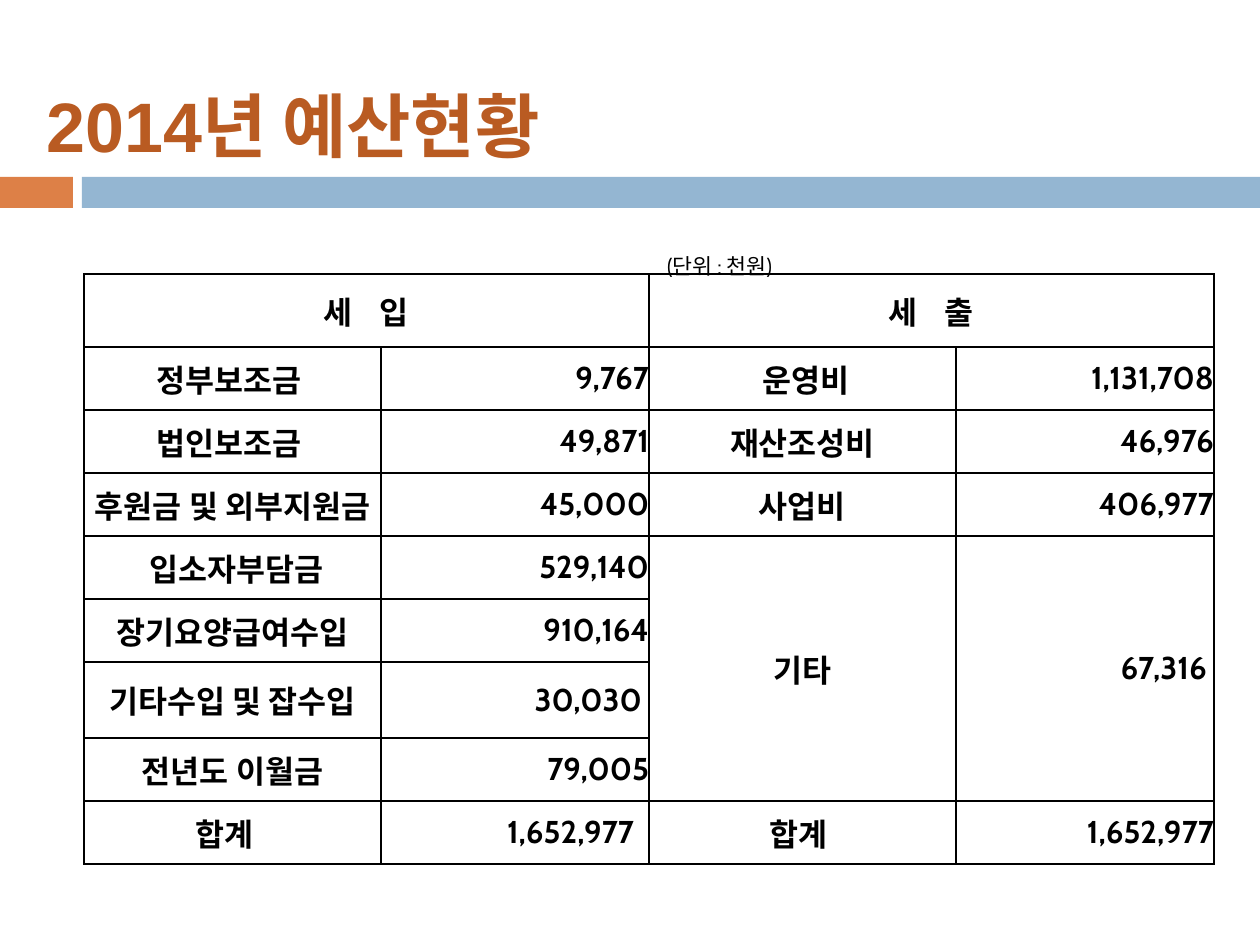
"""Build the 2014 budget slide: title, divider bars, unit note and budget table."""
from dataclasses import dataclass

from lxml.etree import SubElement
from pptx import Presentation
from pptx.dml.color import RGBColor
from pptx.enum.shapes import MSO_SHAPE
from pptx.enum.text import MSO_ANCHOR, MSO_AUTO_SIZE, PP_ALIGN
from pptx.oxml.ns import qn
from pptx.util import Emu, Pt


@dataclass(frozen=True)
class Theme:
    """Colours, fonts and type sizes."""
    ink: str = "000000"
    title: str = "B95B22"
    orange: str = "DD8047"
    blue: str = "94B6D2"
    title_font: str = "Arial"
    body_font: str = "Cabin"
    title_pt: float = 40
    table_pt: float = 18
    note_pt: float = 12.4
    border_pt: float = 1


@dataclass(frozen=True)
class Box:
    """A rectangle in px."""
    x: int
    y: int
    w: int
    h: int


@dataclass(frozen=True)
class Bar:
    """A coloured divider bar."""
    box: Box
    color: str


@dataclass(frozen=True)
class Entry:
    """A table cell with its place, span, right padding and tracking."""
    row: int
    col: int
    text: str
    rows: int = 1
    cols: int = 1
    pad: int = 0
    tracking: int = 0


THEME = Theme()
SCALE = 914400 / 126
TITLE = Box(34, 76, 804, 97)
NOTE = Box(667, 249, 300, 34)
TABLE = Box(84, 274, 1132, 590)
COLS = (297, 268, 307, 258)
ROWS = (73, 63, 63, 63, 63, 63, 76, 63, 63)
BARS = (
    Bar(Box(0, 177, 73, 31), THEME.orange),
    Bar(Box(82, 177, 1178, 31), THEME.blue),
)
INCOME = (
    ("정부보조금 ", "9,767"),
    ("법인보조금 ", "49,871"),
    ("후원금 및 외부지원금", "45,000"),
    (" 입소자부담금", "529,140"),
    ("장기요양급여수입", "910,164"),
    (" 기타수입 및 잡수입 ", "30,030 "),
    ("전년도 이월금", "79,005"),
)
SPENDING = (
    (" 운영비", "1,131,708"),
    ("재산조성비", "46,976"),
    ("사업비", "406,977"),
)
ENTRIES = (
    Entry(0, 0, "세 입", cols=2, tracking=570),
    Entry(0, 2, "세 출", cols=2, tracking=570),
    *(Entry(i, j, t) for i, row in enumerate(INCOME, 1) for j, t in enumerate(row)),
    *(Entry(i, j, t) for i, row in enumerate(SPENDING, 1) for j, t in enumerate(row, 2)),
    Entry(4, 2, "기타", rows=4),
    Entry(4, 3, "67,316 ", rows=4),
    Entry(8, 0, "합계", pad=17),
    Entry(8, 1, "1,652,977", pad=15),
    Entry(8, 2, "합계 "),
    Entry(8, 3, "1,652,977"),
)


def px(n: int) -> Emu:
    """Turn px into EMU."""
    return Emu(round(n * SCALE))


def place(box: Box) -> dict:
    """Return the position attributes of a box."""
    return dict(left=px(box.x), top=px(box.y), width=px(box.w), height=px(box.h))


def apply(target, values: dict) -> None:
    """Set each value as an attribute of the target."""
    for name, value in values.items():
        setattr(target, name, value)


def add_run(p, text: str, font: str, size: float, color: str, bold: bool = False):
    """Add a formatted run to a paragraph."""
    r = p.add_run()
    r.text = text
    apply(r.font, dict(name=font, size=Pt(size), bold=bold))
    r.font.color.rgb = RGBColor.from_string(color)
    return r


def draw_title(s) -> None:
    """Fill the title placeholder."""
    sp = s.shapes.title
    apply(sp, place(TITLE))
    apply(sp.text_frame, dict(vertical_anchor=MSO_ANCHOR.MIDDLE, word_wrap=True,
                              auto_size=MSO_AUTO_SIZE.NONE))
    p = sp.text_frame.paragraphs[0]
    p.alignment = PP_ALIGN.JUSTIFY
    add_run(p, "2014년 예산현황", THEME.title_font, THEME.title_pt, THEME.title, True)


def draw_note(s) -> None:
    """Fill the body placeholder with the unit note."""
    sp = s.placeholders[1]
    apply(sp, place(NOTE))
    apply(sp.text_frame, dict(margin_left=0, margin_right=0, margin_top=0, margin_bottom=0,
                              vertical_anchor=MSO_ANCHOR.MIDDLE, word_wrap=True,
                              auto_size=MSO_AUTO_SIZE.NONE))
    p = sp.text_frame.paragraphs[0]
    p.space_before = Pt(0)
    pPr = p._p.get_or_add_pPr()
    pPr.set("marL", "0")
    pPr.set("indent", "0")
    SubElement(pPr, qn("a:buNone"))
    add_run(p, "(단위 : 천원)", THEME.body_font, THEME.note_pt, THEME.ink)


def draw_bar(s, bar: Bar) -> None:
    """Draw a divider bar."""
    b = bar.box
    sp = s.shapes.add_shape(MSO_SHAPE.RECTANGLE, px(b.x), px(b.y), px(b.w), px(b.h))
    sp.shadow.inherit = False
    sp.fill.solid()
    sp.fill.fore_color.rgb = RGBColor.from_string(bar.color)
    sp.line.fill.background()


def style_cell(cell) -> None:
    """Give a cell black borders and no fill."""
    tcPr = cell._tc.get_or_add_tcPr()
    for side in ("lnL", "lnR", "lnT", "lnB"):
        ln = SubElement(tcPr, qn(f"a:{side}"), w=str(Pt(THEME.border_pt)))
        fill = SubElement(ln, qn("a:solidFill"))
        SubElement(fill, qn("a:srgbClr"), val=THEME.ink)
    cell.fill.background()


def fill_cell(table, e: Entry) -> None:
    """Merge and fill the cell of an entry."""
    cell = table.cell(e.row, e.col)
    if e.rows * e.cols > 1:
        cell.merge(table.cell(e.row + e.rows - 1, e.col + e.cols - 1))
    apply(cell, dict(margin_left=0, margin_right=px(e.pad), margin_top=0, margin_bottom=0,
                     vertical_anchor=MSO_ANCHOR.MIDDLE))
    p = cell.text_frame.paragraphs[0]
    p.alignment = PP_ALIGN.RIGHT if e.col % 2 else PP_ALIGN.CENTER
    r = add_run(p, e.text, THEME.body_font, THEME.table_pt, THEME.ink, True)
    if e.tracking:
        r._r.get_or_add_rPr().set("spc", str(e.tracking))


def draw_table(s) -> None:
    """Draw the budget table."""
    table = s.shapes.add_table(len(ROWS), len(COLS), *place(TABLE).values()).table
    apply(table, dict(first_row=False, horz_banding=False))
    for col, w in zip(table.columns, COLS):
        col.width = px(w)
    for row, h in zip(table.rows, ROWS):
        row.height = px(h)
    for cell in table.iter_cells():
        style_cell(cell)
    for e in ENTRIES:
        fill_cell(table, e)


def main() -> None:
    """Build and save the slide."""
    prs = Presentation()
    apply(prs, dict(slide_width=px(1260), slide_height=px(945)))
    s = prs.slides.add_slide(prs.slide_layouts[1])
    for bar in BARS:
        draw_bar(s, bar)
    draw_table(s)
    draw_note(s)
    draw_title(s)
    prs.save("out.pptx")


if __name__ == "__main__":
    main()
